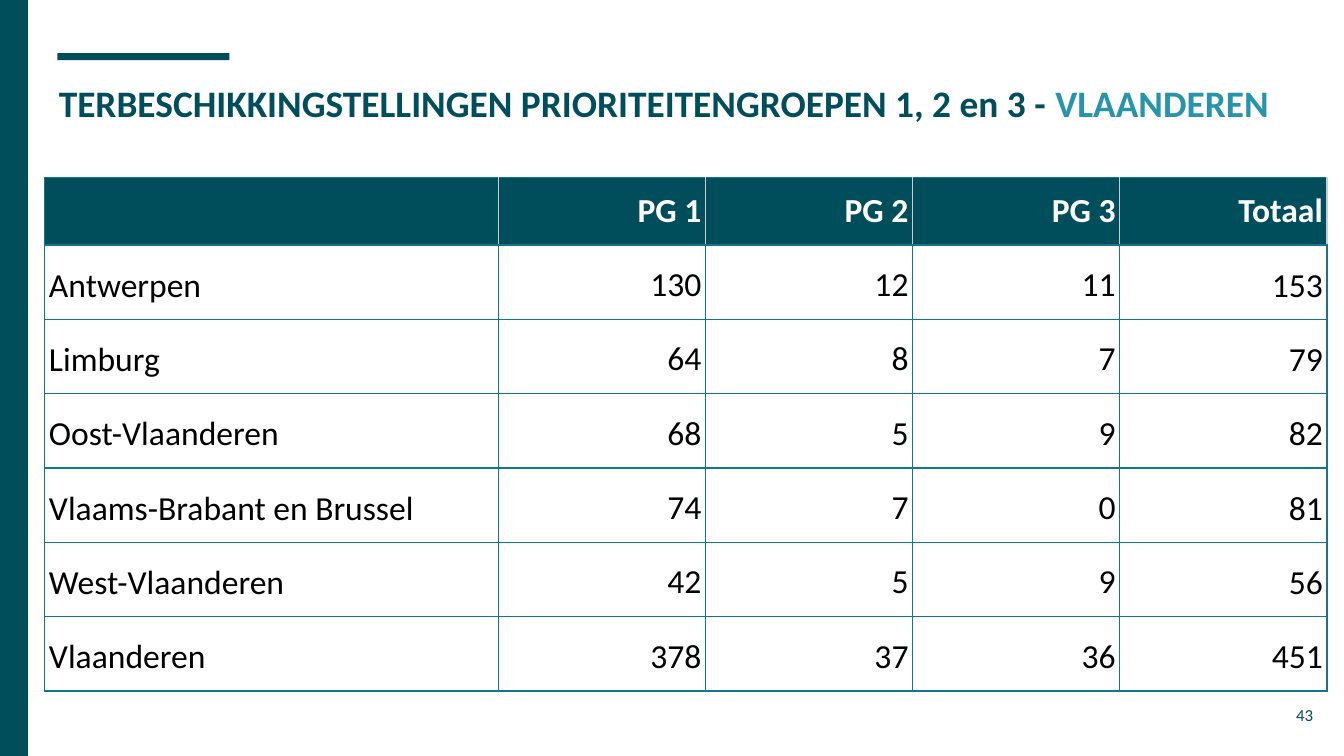
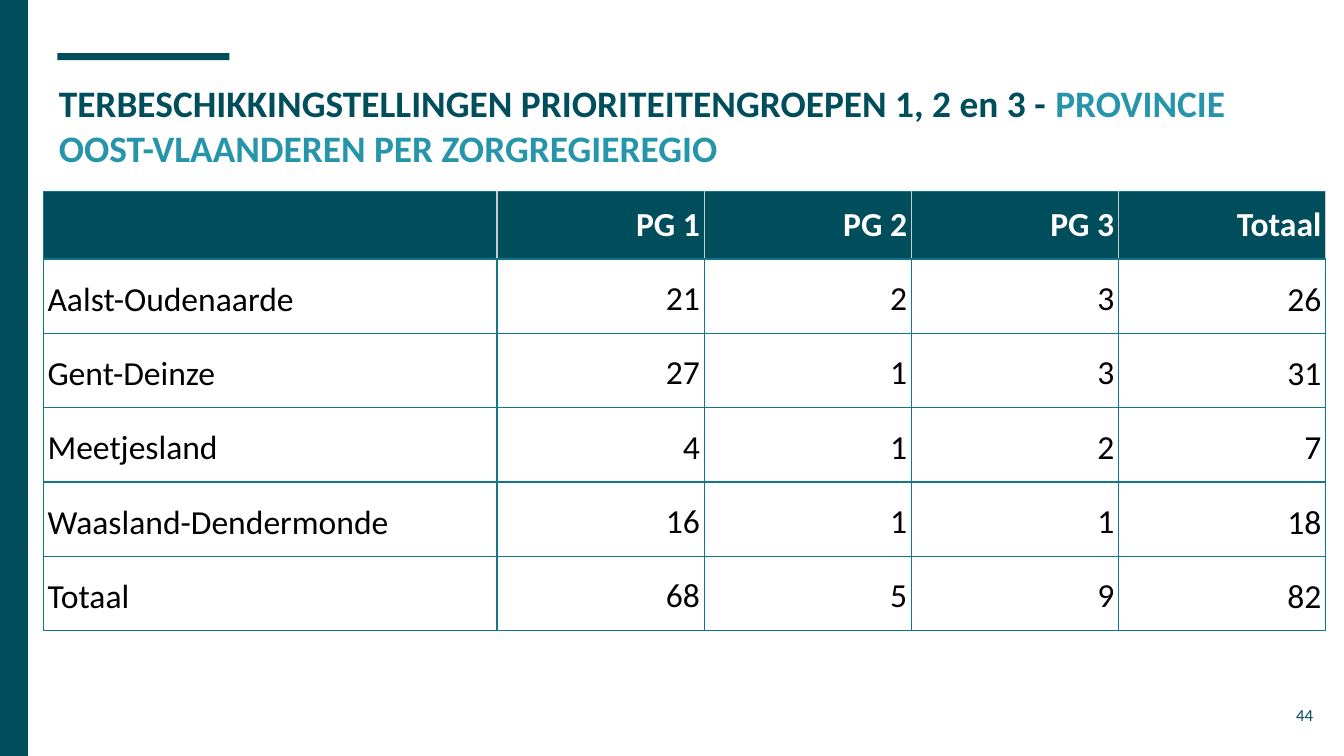
from dataclasses import dataclass

from lxml import etree
from pptx import Presentation
from pptx import util as u
from pptx.dml.color import RGBColor
from pptx.enum import shapes, text
from pptx.oxml import ns


@dataclass(frozen=True)
class Theme:
    """Colours, font and type sizes of the deck."""
    dark: str = "004D5C"
    light: str = "2695AB"
    line: str = "11788C"
    rule: str = "CCCCCC"
    white: str = "FFFFFF"
    black: str = "000000"
    font: str = "Calibri"
    head: int = 20
    body: int = 18
    foot: int = 9


T = Theme()
WIDE, HIGH = 960, 540
PAD = 10
LEFT, RIGHT = text.PP_ALIGN.LEFT, text.PP_ALIGN.RIGHT
TOP, MID, LOW = text.MSO_ANCHOR.TOP, text.MSO_ANCHOR.MIDDLE, text.MSO_ANCHOR.BOTTOM
COLS = (324, 148, 148, 148, 148)
HEADS = ("", "PG 1", "PG 2", "PG 3", "Totaal")
TITLE = "TERBESCHIKKINGSTELLINGEN PRIORITEITENGROEPEN 1, 2 en 3 - "
SLIDES = (
    (43, "VLAANDEREN", (32, 127), (
        ("Antwerpen", 130, 12, 11, 153),
        ("Limburg", 64, 8, 7, 79),
        ("Oost-Vlaanderen", 68, 5, 9, 82),
        ("Vlaams-Brabant en Brussel", 74, 7, 0, 81),
        ("West-Vlaanderen", 42, 5, 9, 56),
        ("Vlaanderen", 378, 37, 36, 451),
    )),
    (44, "PROVINCIE OOST-VLAANDEREN PER ZORGREGIEREGIO", (31, 137), (
        ("Aalst-Oudenaarde", 21, 2, 3, 26),
        ("Gent-Deinze", 27, 1, 3, 31),
        ("Meetjesland", 4, 1, 2, 7),
        ("Waasland-Dendermonde", 16, 1, 1, 18),
        ("Totaal", 68, 5, 9, 82),
    )),
)


def px(n):
    """Turn px, 96 to the inch, into EMU."""
    return u.Emu(n * 9525)


def rgb(code):
    """Make a colour from its hex code."""
    return RGBColor.from_string(code)


def add_run(para, words, size, color, bold=False):
    """Add one styled run to a paragraph."""
    run = para.add_run()
    run.text = words
    font = run.font
    font.name, font.size, font.bold = T.font, u.Pt(size), bold
    font.color.rgb = rgb(color)


def add_bar(slide, *box):
    """Draw a plain dark bar."""
    bar = slide.shapes.add_shape(shapes.MSO_SHAPE.RECTANGLE, *map(px, box))
    bar.shadow.inherit = False
    bar.fill.solid()
    bar.fill.fore_color.rgb = rgb(T.dark)
    bar.line.fill.background()


def add_text(slide, box, anchor, align):
    """Add a wrapped text box and return its paragraph."""
    frame = slide.shapes.add_textbox(*map(px, box)).text_frame
    frame.word_wrap = True
    frame.vertical_anchor = anchor
    frame.margin_left = frame.margin_right = px(PAD)
    frame.margin_top = frame.margin_bottom = px(PAD)
    para = frame.paragraphs[0]
    para.alignment = align
    return para


def add_frame(slide, topic, page):
    """Draw the bars, title and page number of a slide."""
    add_bar(slide, 41, 38, 123, 5)
    add_bar(slide, 0, 0, 20, HIGH)
    para = add_text(slide, (32, 47, 895, 80), TOP, LEFT)
    add_run(para, TITLE, T.head, T.dark, True)
    add_run(para, topic, T.head, T.light, True)
    para = add_text(slide, (890, 490, 58, 41), MID, RIGHT)
    add_run(para, str(page), T.foot, T.dark)


def add_edges(cell, colors):
    """Give a cell its left, right, top and bottom lines."""
    props = cell._tc.get_or_add_tcPr()
    for side, color in zip("LRTB", colors):
        line = etree.SubElement(props, ns.qn(f"a:ln{side}"), w=str(u.Pt(0.75)))
        fill = etree.SubElement(line, ns.qn("a:solidFill"))
        etree.SubElement(fill, ns.qn("a:srgbClr"), val=color)


def fill_cell(cell, value, col, head):
    """Style one table cell and write its value."""
    first = col == 0
    left = T.rule if head and not first else T.line
    right = T.rule if head else T.line
    add_edges(cell, (left, right, T.line, T.line))
    if first and not head:
        cell.fill.background()
    else:
        cell.fill.solid()
        cell.fill.fore_color.rgb = rgb(T.dark if head else T.white)
    cell.margin_left = cell.margin_right = px(3)
    cell.margin_top = cell.margin_bottom = px(PAD - 1 if head else PAD)
    cell.vertical_anchor = TOP if head else LOW
    para = cell.text_frame.paragraphs[0]
    para.alignment = LEFT if first else RIGHT
    if not head and col in (0, len(COLS) - 1):
        para.line_spacing = 1.15
    if value != "":
        add_run(para, str(value), T.body, T.white if head else T.black, head)


def add_grid(slide, spot, rows):
    """Build the table of counts at the given spot."""
    highs = [48] + [51] * len(rows)
    size = (sum(COLS), sum(highs))
    grid = slide.shapes.add_table(
        len(highs), len(COLS), *map(px, spot + size)).table
    grid.first_row = grid.horz_banding = False
    for col, wide in zip(grid.columns, COLS):
        col.width = px(wide)
    for r, (high, row) in enumerate(zip(highs, (HEADS, *rows))):
        grid.rows[r].height = px(high)
        for c, value in enumerate(row):
            fill_cell(grid.cell(r, c), value, c, r == 0)


def main():
    """Build the deck and save it."""
    deck = Presentation()
    deck.slide_width, deck.slide_height = px(WIDE), px(HIGH)
    for page, topic, spot, rows in SLIDES:
        slide = deck.slides.add_slide(deck.slide_layouts[6])
        add_frame(slide, topic, page)
        add_grid(slide, spot, rows)
    deck.save("out.pptx")


if __name__ == "__main__":
    main()
